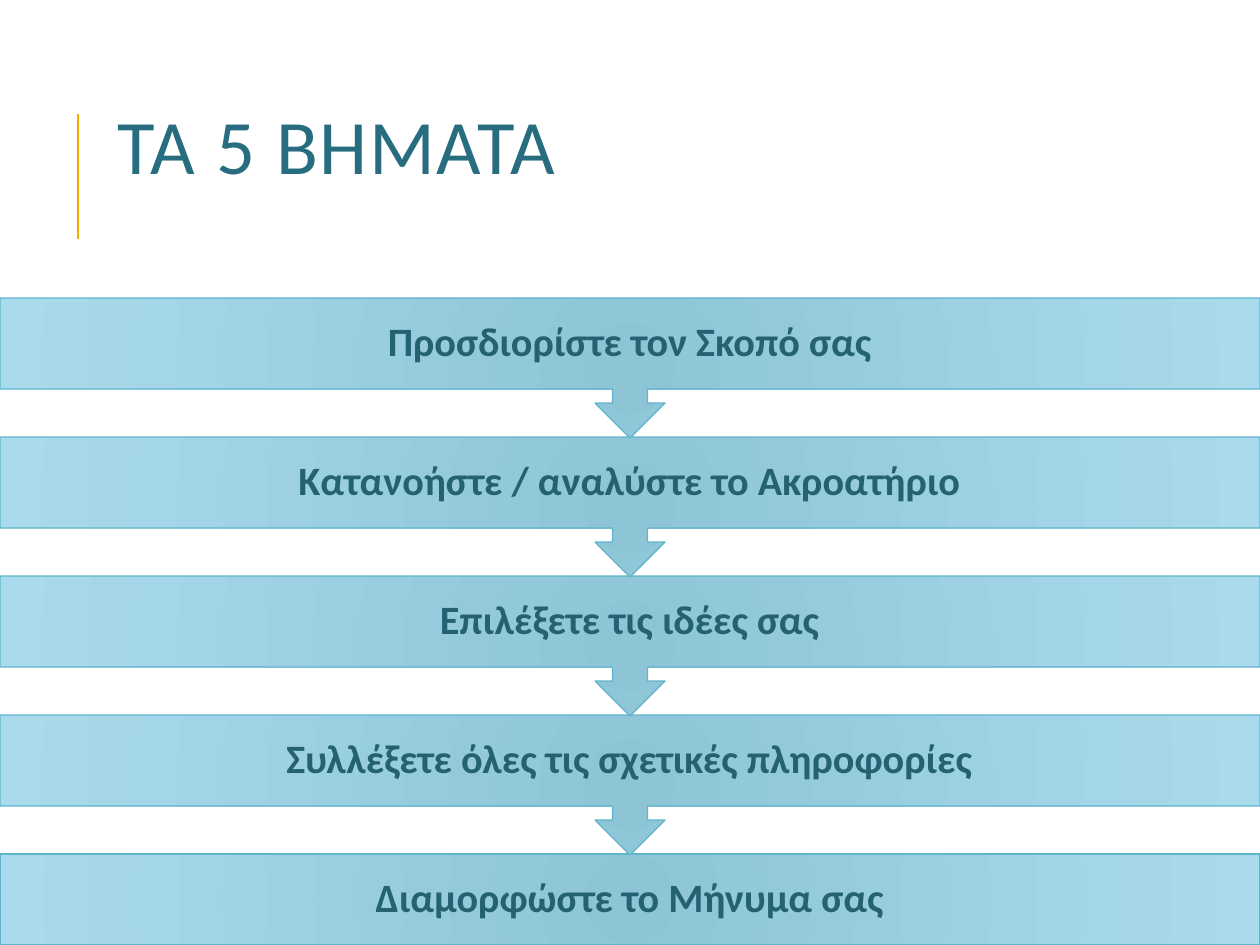
from lxml.etree import SubElement
from pptx import Presentation
from pptx.dml.color import RGBColor
from pptx.enum.shapes import MSO_CONNECTOR, MSO_SHAPE
from pptx.enum.text import MSO_ANCHOR, PP_ALIGN
from pptx.oxml import parse_xml
from pptx.oxml.ns import nsdecls, qn
from pptx.util import Pt

# Content
TITLE = "ΤΑ 5 ΒΗΜΑΤΑ"
STEPS = [
    "Προσδιορίστε τον Σκοπό σας",
    "Κατανοήστε / αναλύστε το Ακροατήριο",
    "Επιλέξετε τις ιδέες σας",
    "Συλλέξετε όλες τις σχετικές πληροφορίες",
    "Διαμορφώστε το Μήνυμα σας",
]
COLORS = {"title": "286D7F", "text": "246171", "accent": "F0AD00",
          "edge": "60B5CC", "inner": "8DC4D6", "outer": "AADBED"}
FONT = "Calibri"

# Layout in px, 126 to the inch
PX = 914400 / 126
SLIDE_W, SLIDE_H = 1260, 945
FIRST_TOP, PITCH = 298, 139
BAR_H, CALLOUT_H = 91, 140
INSET = 23


def px(*lengths):
    return [round(n * PX) for n in lengths]


def color(name):
    return RGBColor.from_string(COLORS[name])


def add_run(p, text, size, name, bold=False):
    r = p.add_run()
    r.text = text
    r.font.name, r.font.size, r.font.bold = FONT, Pt(size), bold
    r.font.color.rgb = color(name)
    return r


def radial_fill(sp):
    grad = parse_xml(
        f'<a:gradFill {nsdecls("a")} rotWithShape="1"><a:gsLst>'
        f'<a:gs pos="0"><a:srgbClr val="{COLORS["inner"]}"/></a:gs>'
        f'<a:gs pos="100000"><a:srgbClr val="{COLORS["outer"]}"/></a:gs>'
        '</a:gsLst><a:path path="circle">'
        '<a:fillToRect l="100000" t="100000" r="100000" b="100000"/>'
        '</a:path></a:gradFill>')
    sp._element.spPr.find(qn("a:prstGeom")).addnext(grad)


def add_bar(s, top, is_last):
    kind = MSO_SHAPE.RECTANGLE if is_last else MSO_SHAPE.UP_ARROW_CALLOUT
    height = BAR_H if is_last else CALLOUT_H
    sp = s.shapes.add_shape(kind, *px(0, top, SLIDE_W, height))
    sp.rotation = 0 if is_last else 180
    sp.shadow.inherit = False
    radial_fill(sp)
    sp.line.color.rgb = color("edge")
    sp.line.width = Pt(0.75)


def add_label(s, top, text):
    tf = s.shapes.add_textbox(*px(0, top, SLIDE_W, BAR_H)).text_frame
    tf.word_wrap = True
    tf.vertical_anchor = MSO_ANCHOR.MIDDLE
    tf.margin_left, tf.margin_top, tf.margin_right, tf.margin_bottom = px(*[INSET] * 4)
    p = tf.paragraphs[0]
    p.alignment = PP_ALIGN.CENTER
    p.line_spacing = 0.9
    after = SubElement(p._p.get_or_add_pPr(), qn("a:spcAft"))
    SubElement(after, qn("a:spcPct")).set("val", "35000")
    add_run(p, text, 23, "text", bold=True)


prs = Presentation()
prs.slide_width, prs.slide_height = px(SLIDE_W, SLIDE_H)
s = prs.slides.add_slide(prs.slide_layouts[5])

# Accent line beside the title
line = s.shapes.add_connector(MSO_CONNECTOR.STRAIGHT, *px(78, 239, 78, 114))
line.line.color.rgb = color("accent")
line.line.width = Pt(1.5)
SubElement(line._element.spPr, qn("a:effectLst"))

# Steps, last one at the back
for i, text in reversed(list(enumerate(STEPS))):
    top = FIRST_TOP + i * PITCH
    add_bar(s, top, i == len(STEPS) - 1)
    add_label(s, top, text)

# Title
title = s.shapes.title
title.left, title.top, title.width, title.height = px(105, 49, 1004, 207)
tf = title.text_frame
tf.word_wrap = True
tf.vertical_anchor = MSO_ANCHOR.MIDDLE
p = tf.paragraphs[0]
p.alignment = PP_ALIGN.LEFT
p.line_spacing = 0.8
r = add_run(p, TITLE, 44, "title")
r.font._element.set("spc", "100")

prs.save("out.pptx")
